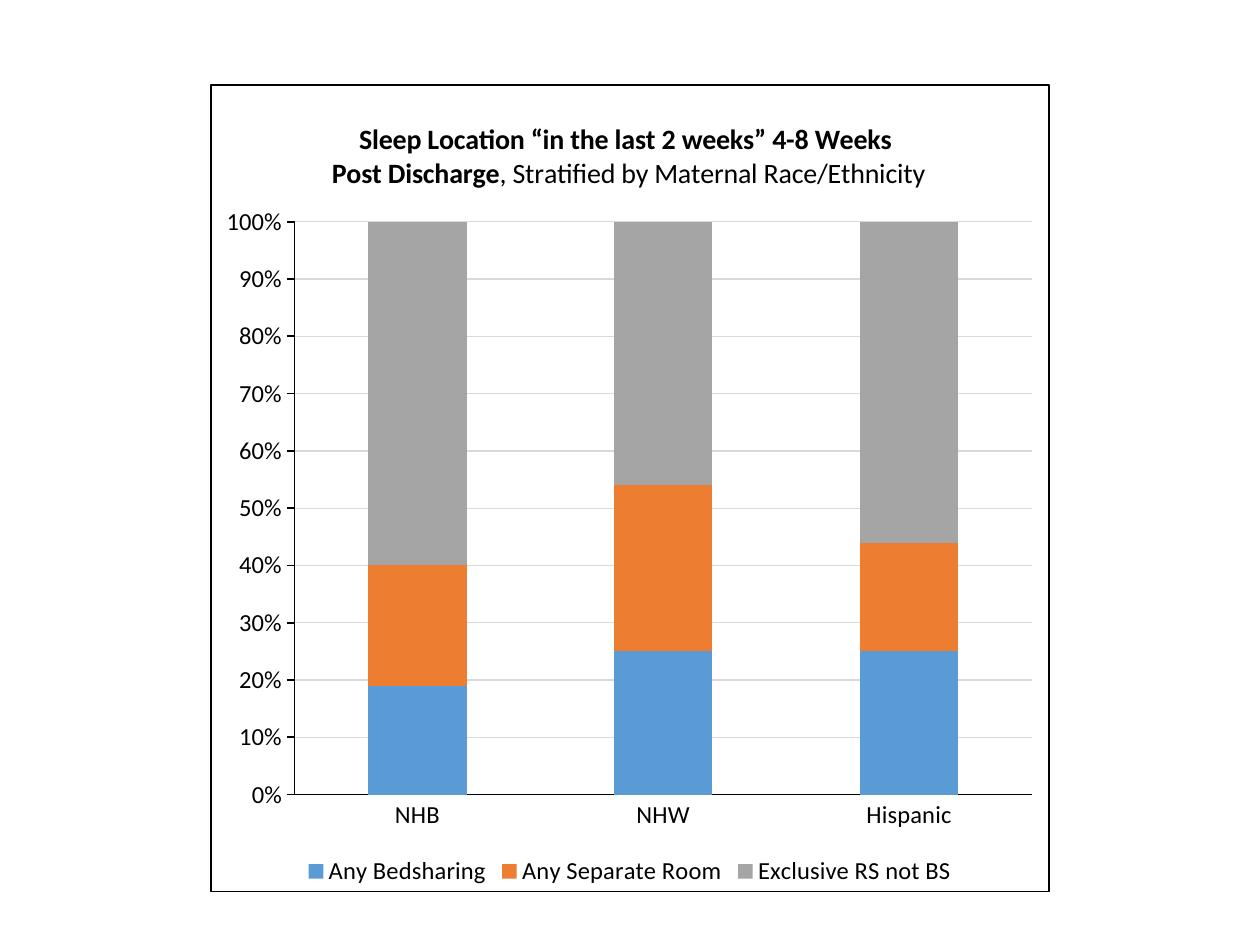
from dataclasses import dataclass

from lxml import etree
from pptx import Presentation
from pptx.chart.chart import Chart
from pptx.chart.data import CategoryChartData
from pptx.dml.color import RGBColor
from pptx.enum.chart import XL_CHART_TYPE, XL_LEGEND_POSITION, XL_TICK_MARK
from pptx.enum.text import PP_ALIGN
from pptx.oxml import parse_xml
from pptx.oxml.ns import nsdecls, qn
from pptx.util import Cm, Pt

STACKED = XL_CHART_TYPE.COLUMN_STACKED
BOTTOM = XL_LEGEND_POSITION.BOTTOM
NO_TICK = XL_TICK_MARK.NONE
TICK_OUT = XL_TICK_MARK.OUTSIDE
CENTER = PP_ALIGN.CENTER

FONT = "Calibri"
BLACK = "000000"
GRID = "D9D9D9"
BLANK_LAYOUT = 6


@dataclass
class SleepSeries:
    name: str
    values: tuple[float, ...]
    color: str


@dataclass
class TitleRun:
    text: str
    bold: bool


GROUPS = ("NHB", "NHW", "Hispanic")
SERIES = (
    SleepSeries("Any Bedsharing", (0.19, 0.25, 0.25), "5B9BD5"),
    SleepSeries("Any Separate Room", (0.21, 0.29, 0.19), "ED7D31"),
    SleepSeries("Exclusive RS not BS", (0.6, 0.46, 0.56), "A5A5A5"),
)
TITLE = (
    (TitleRun("Sleep Location “in the last 2 weeks” 4-8 Weeks ", True),),
    (
        TitleRun("Post Discharge", True),
        TitleRun(", Stratified by Maternal Race/Ethnicity", False),
    ),
)


def rgb(color: str) -> RGBColor:
    return RGBColor.from_string(color)


def set_font(font, size: float, bold: bool = False) -> None:
    font.name = FONT
    font.size = Pt(size)
    font.bold = bold
    font.color.rgb = rgb(BLACK)


def set_line(line, color: str, width: float) -> None:
    line.color.rgb = rgb(color)
    line.width = Pt(width)


def set_layout(parent: etree._Element, index: int, inner: bool, **place: float) -> None:
    for old in parent.findall(qn("c:layout")):
        parent.remove(old)
    target = '<c:layoutTarget val="inner"/>' if inner else ""
    modes = "".join(f'<c:{k}Mode val="edge"/>' for k in "xy")
    sizes = "".join(f'<c:{k} val="{v}"/>' for k, v in place.items())
    parent.insert(index, parse_xml(
        f'<c:layout {nsdecls("c")}><c:manualLayout>{target}{modes}{sizes}'
        "</c:manualLayout></c:layout>"
    ))


def add_title(chart: Chart) -> None:
    tf = chart.chart_title.text_frame
    for i, runs in enumerate(TITLE):
        p = tf.paragraphs[0] if i == 0 else tf.add_paragraph()
        p.alignment = CENTER
        for run in runs:
            r = p.add_run()
            r.text = run.text
            set_font(r.font, 16, run.bold)
    chart.chart_title.include_in_layout = False
    title = chart._chartSpace.find(".//" + qn("c:title"))
    set_layout(title, 1, False, x=0.14, y=0.04)


def format_axes(chart: Chart) -> None:
    for axis, tick in ((chart.category_axis, NO_TICK), (chart.value_axis, TICK_OUT)):
        axis.major_tick_mark = tick
        axis.minor_tick_mark = NO_TICK
        set_font(axis.tick_labels.font, 14)
        set_line(axis.format.line, BLACK, 1)
    axis = chart.value_axis
    axis.minimum_scale, axis.maximum_scale, axis.major_unit = 0, 1, 0.1
    axis.tick_labels.number_format = "0%"
    axis.tick_labels.number_format_is_linked = False
    axis.has_major_gridlines = True
    set_line(axis.major_gridlines.format.line, GRID, 0.75)


def add_border(chart: Chart) -> None:
    chart._chartSpace.find(qn("c:chart")).addnext(parse_xml(
        f'<c:spPr {nsdecls("c", "a")}><a:noFill/><a:ln w="{Pt(1)}"><a:solidFill>'
        f'<a:srgbClr val="{BLACK}"/></a:solidFill></a:ln></c:spPr>'
    ))


def add_sleep_chart(slide) -> None:
    data = CategoryChartData(number_format="0%")
    data.categories = GROUPS
    for series in SERIES:
        data.add_series(series.name, series.values)
    chart = slide.shapes.add_chart(
        STACKED, Cm(4.23), Cm(1.69), Cm(16.93), Cm(16.3), data
    ).chart
    set_font(chart.font, 10)
    add_title(chart)
    format_axes(chart)

    plot = chart.plots[0]
    plot.gap_width, plot.overlap = 150, 100
    plot.vary_by_categories = False
    for drawn, series in zip(plot.series, SERIES):
        drawn.format.fill.solid()
        drawn.format.fill.fore_color.rgb = rgb(series.color)

    chart.has_legend = True
    chart.legend.position = BOTTOM
    chart.legend.include_in_layout = False
    set_font(chart.legend.font, 14)
    plot_area = chart._chartSpace.find(".//" + qn("c:plotArea"))
    set_layout(plot_area, 0, True, x=0.1, y=0.17, w=0.88, h=0.71)
    add_border(chart)


def main() -> None:
    prs = Presentation()
    prs.slide_width, prs.slide_height = Cm(25.4), Cm(19.05)
    slide = prs.slides.add_slide(prs.slide_layouts[BLANK_LAYOUT])
    add_sleep_chart(slide)
    prs.save("out.pptx")


if __name__ == "__main__":
    main()
